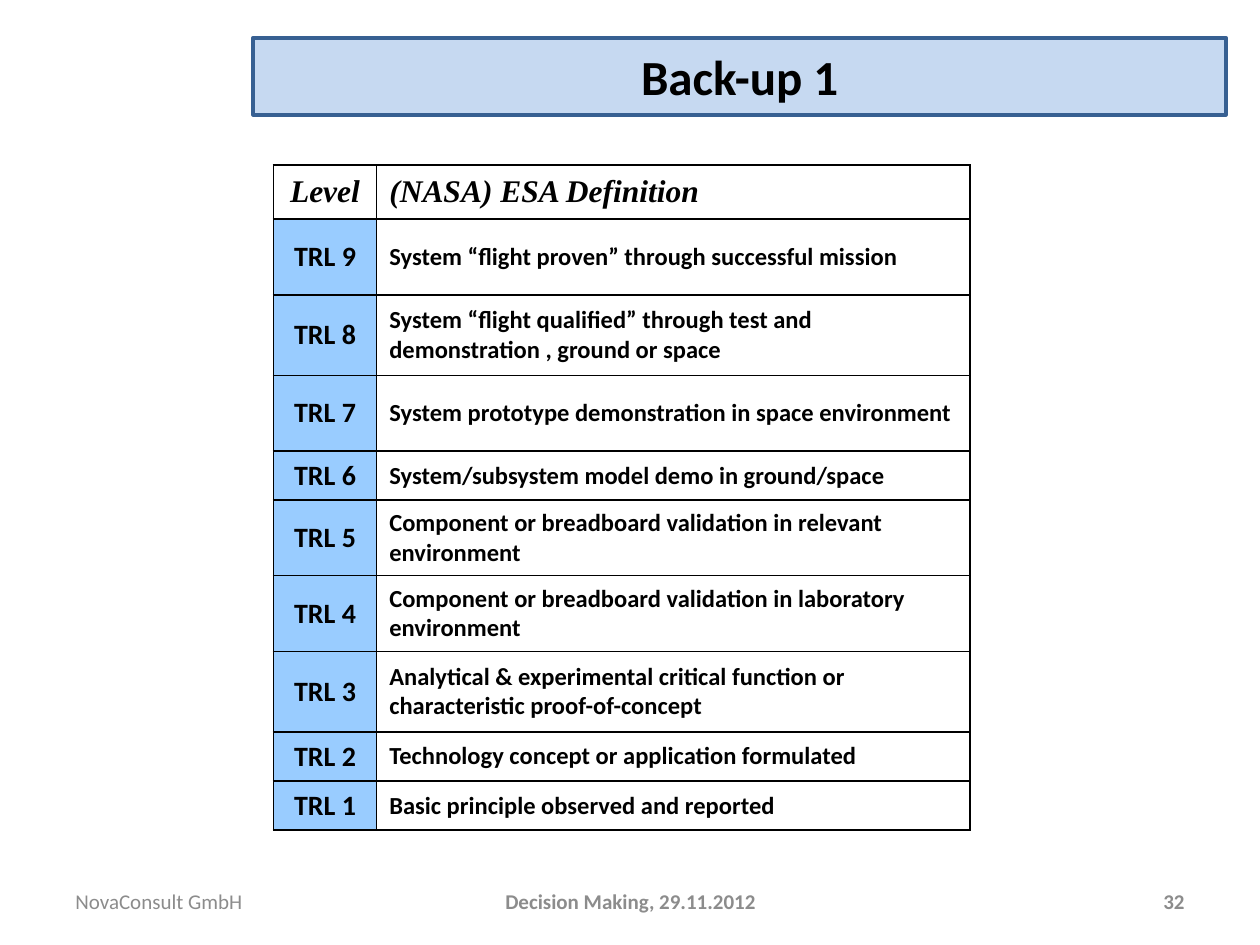
"""Build a slide with a table of technology readiness levels."""
from lxml import etree
from pptx import Presentation
from pptx.dml.color import RGBColor
from pptx.enum.shapes import MSO_SHAPE
from pptx.enum.text import MSO_ANCHOR, PP_ALIGN
from pptx.oxml.ns import qn
from pptx.util import Inches, Pt

RECTANGLE = MSO_SHAPE.RECTANGLE
MIDDLE = MSO_ANCHOR.MIDDLE
LEFT, CENTER, RIGHT = PP_ALIGN.LEFT, PP_ALIGN.CENTER, PP_ALIGN.RIGHT

COLUMN_WIDTHS = [0.82, 4.71]
HEADER_HEIGHT = 0.43
HEADINGS = ["Level", "(NASA) ESA Definition"]
LEVELS = [
    (0.6, "System “flight proven” through successful mission"),
    (0.64, "System “flight qualified” through test and demonstration , ground or space"),
    (0.6, "System prototype demonstration in space environment"),
    (0.39, "System/subsystem model demo in ground/space"),
    (0.6, "Component or breadboard validation in relevant environment"),
    (0.6, "Component or breadboard validation in laboratory environment"),
    (0.64, "Analytical & experimental critical function or characteristic proof-of-concept"),
    (0.39, "Technology concept or application formulated"),
    (0.39, "Basic principle observed and reported"),
]
FOOTERS = [
    (0.5, 2.33, "NovaConsult GmbH", LEFT, False),
    (3.42, 3.17, "Decision Making, 29.11.2012", CENTER, True),
    (7.17, 2.33, "32", RIGHT, True),
]


def color(value):
    return RGBColor.from_string(value)


class SlideBuilder:
    """Hold the style and the current slide, and add elements to it."""

    font = "Calibri"
    header_font = "Times New Roman"
    black, gray = "000000", "8C8C8C"
    title_fill, title_line, level_fill = "C6D9F1", "376092", "99CCFF"

    def __init__(self, slide):
        self.slide = slide

    def add_text(self, frame, text, align, hue=black, **formats):
        frame.word_wrap = True
        para = frame.paragraphs[0]
        para.alignment = align
        span = para.add_run()
        span.text = text
        for name, value in {"name": self.font, "bold": True, **formats}.items():
            setattr(span.font, name, value)
        span.font.color.rgb = color(hue)

    def title(self, text, left, top, width, height):
        box = self.slide.shapes.add_shape(RECTANGLE, *map(Inches, (left, top, width, height)))
        box.shadow.inherit = False
        box.fill.solid()
        box.fill.fore_color.rgb = color(self.title_fill)
        box.line.color.rgb = color(self.title_line)
        box.line.width = Pt(2.25)
        box.text_frame.vertical_anchor = MIDDLE
        self.add_text(box.text_frame, text, CENTER, size=Pt(28))

    def footer(self, left, width, text, align, bold):
        box = self.slide.shapes.add_textbox(*map(Inches, (left, 6.95, width, 0.4)))
        box.text_frame.vertical_anchor = MIDDLE
        self.add_text(box.text_frame, text, align, self.gray, size=Pt(12), bold=bold)

    def border(self, cell):
        properties = cell._tc.get_or_add_tcPr()
        for position, side in enumerate("LRTB"):
            line = etree.Element(qn(f"a:ln{side}"), w=str(Pt(1)))
            fill = etree.SubElement(line, qn("a:solidFill"))
            etree.SubElement(fill, qn("a:srgbClr"), val=self.black)
            properties.insert(position, line)

    def cell(self, cell, text, align, fill=None, **formats):
        cell.vertical_anchor = MIDDLE
        if fill:
            cell.fill.solid()
            cell.fill.fore_color.rgb = color(fill)
        else:
            cell.fill.background()
        self.border(cell)
        self.add_text(cell.text_frame, text, align, **formats)

    def table(self, left, top):
        heights = [HEADER_HEIGHT] + [height for height, _ in LEVELS]
        size = (left, top, sum(COLUMN_WIDTHS), sum(heights))
        table = self.slide.shapes.add_table(
            len(heights), len(COLUMN_WIDTHS), *map(Inches, size)).table
        table.horz_banding = False
        for column, width in zip(table.columns, COLUMN_WIDTHS):
            column.width = Inches(width)
        for row, height in zip(table.rows, heights):
            row.height = Inches(height)
        for column, (text, align) in enumerate(zip(HEADINGS, (CENTER, LEFT))):
            self.cell(table.cell(0, column), text, align,
                      name=self.header_font, size=Pt(18), italic=True)
        for row, (_, definition) in enumerate(LEVELS, start=1):
            level = len(LEVELS) + 1 - row
            self.cell(table.cell(row, 0), f"TRL {level}", CENTER, self.level_fill, size=Pt(16))
            self.cell(table.cell(row, 1), definition, LEFT, size=Pt(14))


def main():
    deck = Presentation()
    deck.slide_width, deck.slide_height = Inches(10), Inches(7.5)
    page = SlideBuilder(deck.slides.add_slide(deck.slide_layouts[6]))
    page.title("Back-up 1", 2.01, 0.3, 7.72, 0.61)
    page.table(2.17, 1.31)
    for footer in FOOTERS:
        page.footer(*footer)
    deck.save("out.pptx")


if __name__ == "__main__":
    main()
